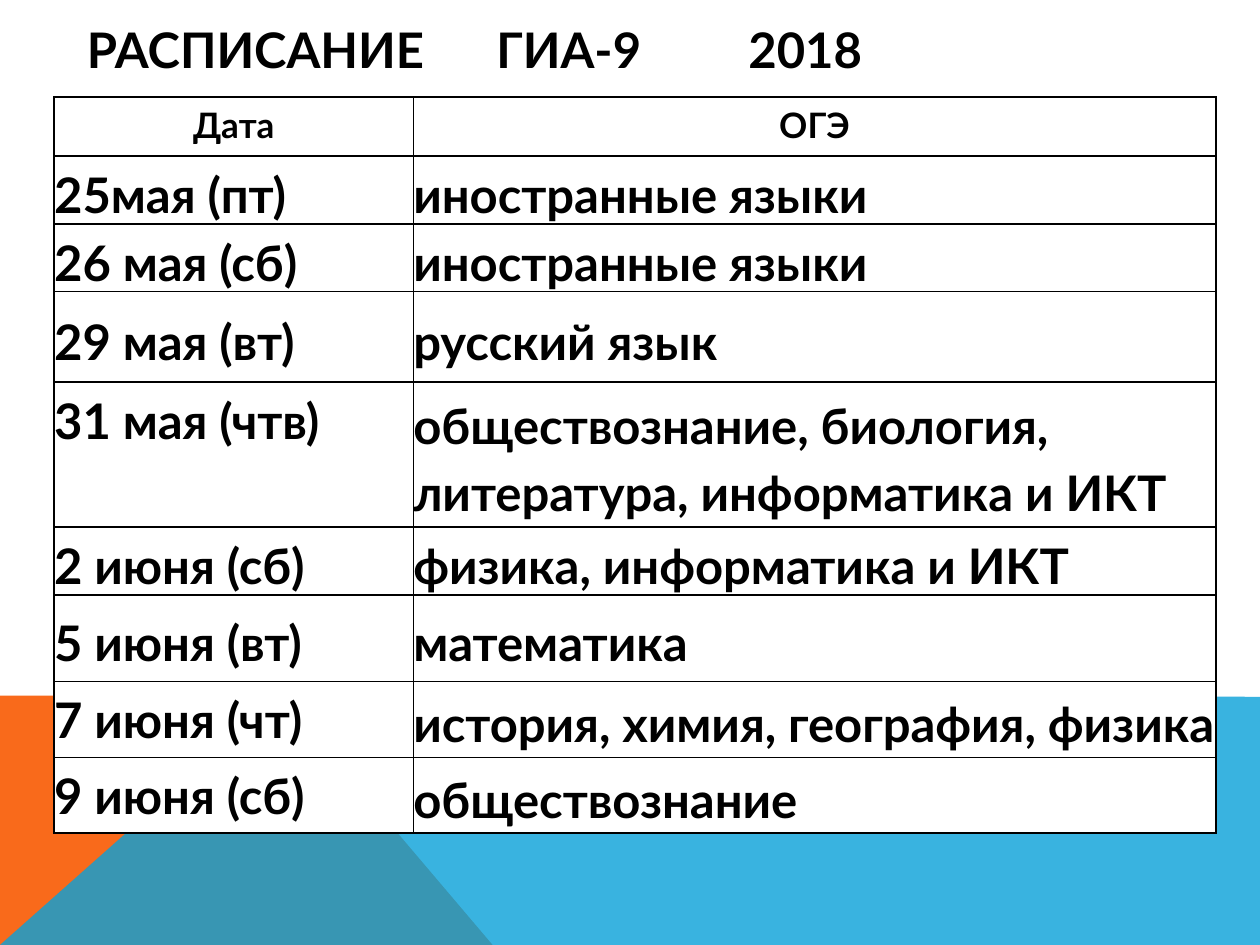
from lxml import etree
from pptx import Presentation
from pptx.dml.color import RGBColor
from pptx.enum.text import MSO_ANCHOR, MSO_AUTO_SIZE, PP_ALIGN
from pptx.oxml.ns import qn
from pptx.util import Inches, Pt

TOP, MIDDLE = MSO_ANCHOR.TOP, MSO_ANCHOR.MIDDLE
LEFT, CENTER = PP_ALIGN.LEFT, PP_ALIGN.CENTER
NO_AUTOFIT = MSO_AUTO_SIZE.NONE
BLACK = RGBColor(0x00, 0x00, 0x00)
WHITE = RGBColor(0xFF, 0xFF, 0xFF)
ORANGE = RGBColor(0xF9, 0x6A, 0x1B)
BLUE = RGBColor(0x08, 0xA1, 0xD9)
FONT = "Lato"

TITLE_PARTS = ["РАСПИСАНИЕ", "ГИА-9", "2018"]
TITLE_TABS = [3.25, 5.25]
COLUMN_WIDTHS = [2.85, 6.37]
SCHEDULE = [
    ("Дата", "ОГЭ", 0.47, TOP, TOP),
    ("25мая (пт)", "иностранные языки", 0.51, MIDDLE, MIDDLE),
    ("26 мая (сб)", "иностранные языки", 0.51, MIDDLE, MIDDLE),
    ("29 мая (вт)", "русский язык", 0.72, MIDDLE, MIDDLE),
    ("31 мая (чтв)", "обществознание, биология, литература, информатика и ИКТ",
     1.15, TOP, MIDDLE),
    ("2 июня (сб)", "физика, информатика и ИКТ", 0.51, MIDDLE, MIDDLE),
    ("5 июня (вт)", "математика", 0.69, MIDDLE, MIDDLE),
    ("7 июня (чт)", "история, химия, география, физика", 0.6, TOP, MIDDLE),
    ("9 июня (сб)", "обществознание", 0.6, TOP, MIDDLE),
]
BANDS = [
    ([(0, 7.5), (0, 5.52), (2.23, 5.52), (3.91, 7.5)], ORANGE, 100),
    ([(0, 7.5), (2.23, 5.52), (10, 5.53), (10, 7.5)], BLUE, 80),
]


def set_attributes(target, values):
    for name, value in values.items():
        setattr(target, name, value)


def format_font(font, size):
    set_attributes(font, {"name": FONT, "size": Pt(size), "bold": True})
    font.color.rgb = BLACK


def add_band(slide, points, color, opacity):
    corners = [(Inches(x), Inches(y)) for x, y in points]
    builder = slide.shapes.build_freeform(*corners[0], scale=1.0)
    builder.add_line_segments(corners[1:], close=True)
    shape = builder.convert_to_shape()
    shape.shadow.inherit = False
    shape.line.fill.background()
    shape.fill.solid()
    shape.fill.fore_color.rgb = color
    if opacity < 100:
        color_element = shape.fill._xPr.find(".//" + qn("a:srgbClr"))
        etree.SubElement(color_element, qn("a:alpha"), val=str(opacity * 1000))


def format_title(title):
    set_attributes(title, {"left": Inches(0.59), "top": Inches(0),
                           "width": Inches(9), "height": Inches(0.77)})
    frame = title.text_frame
    set_attributes(frame, {"auto_size": NO_AUTOFIT, "word_wrap": True,
                           "vertical_anchor": MIDDLE})
    paragraph = frame.paragraphs[0]
    paragraph.alignment = LEFT
    run = paragraph.add_run()
    run.text = "\t".join(TITLE_PARTS)
    format_font(run.font, 28)
    tabs = etree.SubElement(paragraph._p.get_or_add_pPr(), qn("a:tabLst"))
    for position in TITLE_TABS:
        etree.SubElement(tabs, qn("a:tab"), pos=str(Inches(position)), algn="l")


def add_borders(cell):
    properties = cell._tc.get_or_add_tcPr()
    for index, side in enumerate(("lnL", "lnR", "lnT", "lnB")):
        line = etree.Element(qn("a:" + side), w=str(Pt(1)))
        fill = etree.SubElement(line, qn("a:solidFill"))
        etree.SubElement(fill, qn("a:srgbClr"), val=str(BLACK))
        properties.insert(index, line)


def fill_cell(cell, text, anchor, alignment, size):
    set_attributes(cell, {"margin_left": 0, "margin_right": 0, "margin_top": 0,
                          "margin_bottom": 0, "vertical_anchor": anchor})
    cell.fill.solid()
    cell.fill.fore_color.rgb = WHITE
    add_borders(cell)
    paragraph = cell.text_frame.paragraphs[0]
    set_attributes(paragraph, {"alignment": alignment, "line_spacing": 1.15,
                               "space_after": Pt(10)})
    run = paragraph.add_run()
    run.text = text
    format_font(run.font, size)


def add_schedule(slide):
    heights = [row[2] for row in SCHEDULE]
    table = slide.shapes.add_table(
        len(SCHEDULE), len(COLUMN_WIDTHS), Inches(0.43), Inches(0.77),
        Inches(sum(COLUMN_WIDTHS)), Inches(sum(heights))).table
    table.horz_banding = False
    for column, width in zip(table.columns, COLUMN_WIDTHS):
        column.width = Inches(width)
    for index, (date, subject, height, *anchors) in enumerate(SCHEDULE):
        table.rows[index].height = Inches(height)
        alignment, size = (CENTER, 20) if index == 0 else (LEFT, 28)
        for column, text in enumerate((date, subject)):
            fill_cell(table.cell(index, column), text, anchors[column],
                      alignment, size)


def main():
    presentation = Presentation()
    set_attributes(presentation, {"slide_width": Inches(10),
                                  "slide_height": Inches(7.5)})
    slide = presentation.slides.add_slide(presentation.slide_layouts[5])
    for band in BANDS:
        add_band(slide, *band)
    title = slide.shapes.title
    slide.shapes._spTree.append(title._element)
    format_title(title)
    add_schedule(slide)
    presentation.save("out.pptx")


if __name__ == "__main__":
    main()
